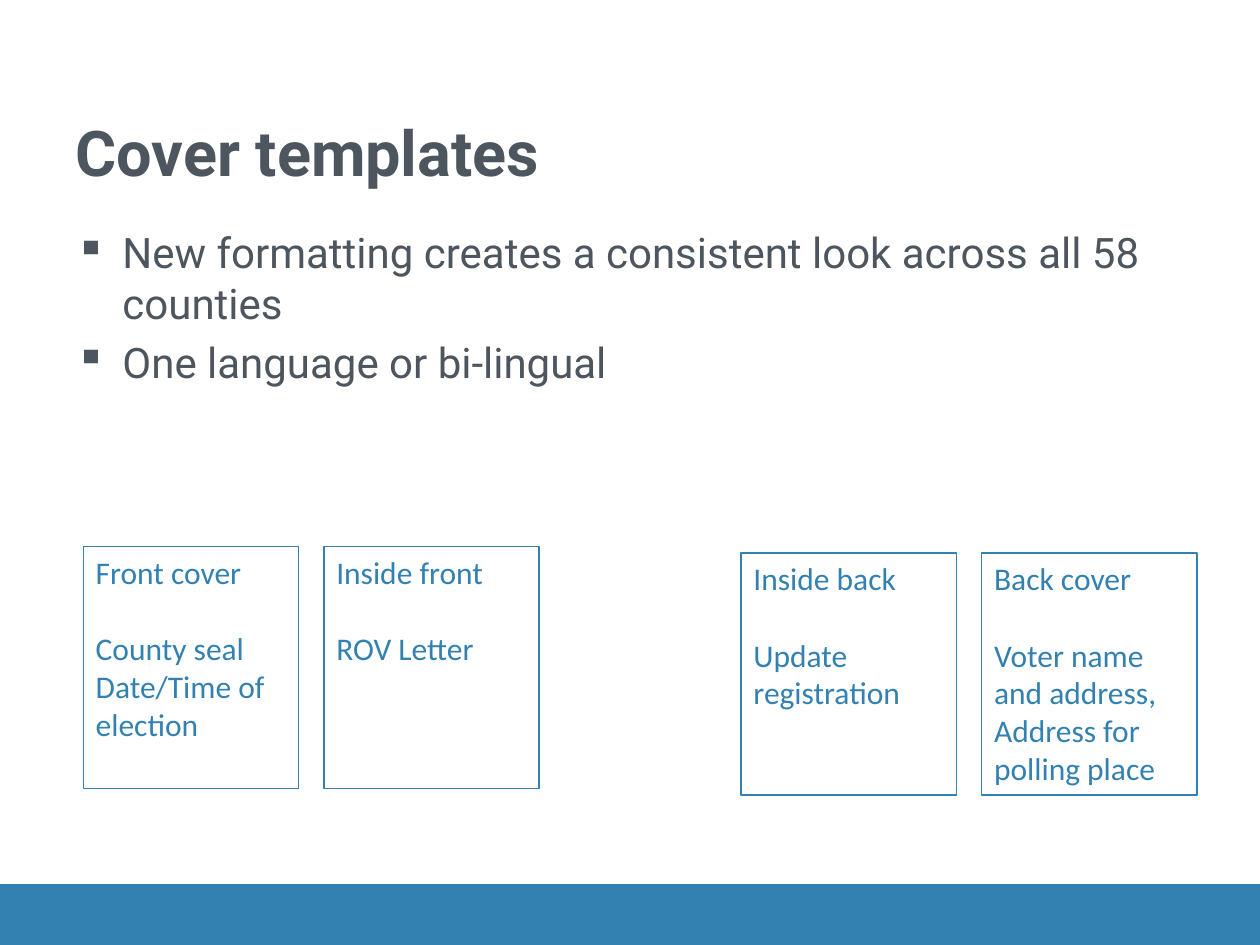
from lxml import etree
from pptx import Presentation
from pptx.dml.color import RGBColor
from pptx.enum.shapes import MSO_SHAPE
from pptx.enum.text import MSO_ANCHOR, PP_ALIGN
from pptx.oxml.ns import qn
from pptx.util import Cm, Pt

RECT = MSO_SHAPE.RECTANGLE
TOP, BOTTOM = MSO_ANCHOR.TOP, MSO_ANCHOR.BOTTOM
LEFT = PP_ALIGN.LEFT
COLORS = {"blue": "3281B0", "gray": "4D565E"}


def add_text(tf, text, font="Roboto", size=24, color="gray", bold=False,
             before=0, bullet=None, first=False):
    p = tf.paragraphs[0] if first else tf.add_paragraph()
    p.alignment = LEFT
    if bullet:
        pPr = p._p.get_or_add_pPr()
        pPr.set("marL", str(Cm(0.95)))
        pPr.set("indent", str(-Cm(0.95)))
        etree.SubElement(pPr, qn("a:buChar")).set("char", bullet)
    p.space_before = Pt(before)
    r = p.add_run()
    r.text = text
    r.font.name = font
    r.font.size = Pt(size)
    r.font.bold = bold
    r.font.color.rgb = RGBColor.from_string(COLORS[color])


prs = Presentation()
prs.slide_width, prs.slide_height = Cm(25.4), Cm(19.05)
s = prs.slides.add_slide(prs.slide_layouts[6])
blue = RGBColor.from_string(COLORS["blue"])

# Footer bar
bar = s.shapes.add_shape(RECT, 0, Cm(17.83), Cm(25.4), Cm(1.27))
bar.shadow.inherit = False
bar.fill.solid()
bar.fill.fore_color.rgb = blue
bar.line.color.rgb = blue
bar.line.width = Pt(0.75)

# Title
tf = s.shapes.add_textbox(Cm(1.27), Cm(0.76), Cm(22.86), Cm(3.18)).text_frame
tf.word_wrap = True
tf.vertical_anchor = BOTTOM
add_text(tf, "Cover templates", size=36, bold=True, first=True)

# Bullets
tf = s.shapes.add_textbox(Cm(1.27), Cm(4.45), Cm(22.86), Cm(12.57)).text_frame
tf.word_wrap = True
bullets = ["New formatting creates a consistent look across all 58 counties",
           "One language or bi-lingual"]
for i, text in enumerate(bullets):
    add_text(tf, text, bullet="▪", before=4.8 if i else 0, first=i == 0)

# Cover cards: two pairs, each on its own row height
pairs = [
    (1.68, 11.02, [["Front cover", "County seal", "Date/Time of election"],
                   ["Inside front", "ROV Letter"]]),
    (14.94, 11.15, [["Inside back", "Update registration"],
                    ["Back cover", "Voter name and address,",
                     "Address for polling place"]]),
]
for left, top, cards in pairs:
    for col, lines in enumerate(cards):
        sp = s.shapes.add_shape(RECT, Cm(left + 4.85 * col), Cm(top),
                                Cm(4.34), Cm(4.88))
        sp.shadow.inherit = False
        sp.fill.background()
        sp.line.color.rgb = blue
        sp.line.width = Pt(0.75)
        tf = sp.text_frame
        tf.word_wrap = True
        tf.vertical_anchor = TOP
        for i, text in enumerate(lines):
            # One line of space separates the heading from its details
            add_text(tf, text, font="Calibri", size=18, color="blue",
                     before=22 if i == 1 else 0, first=i == 0)

prs.save("out.pptx")
